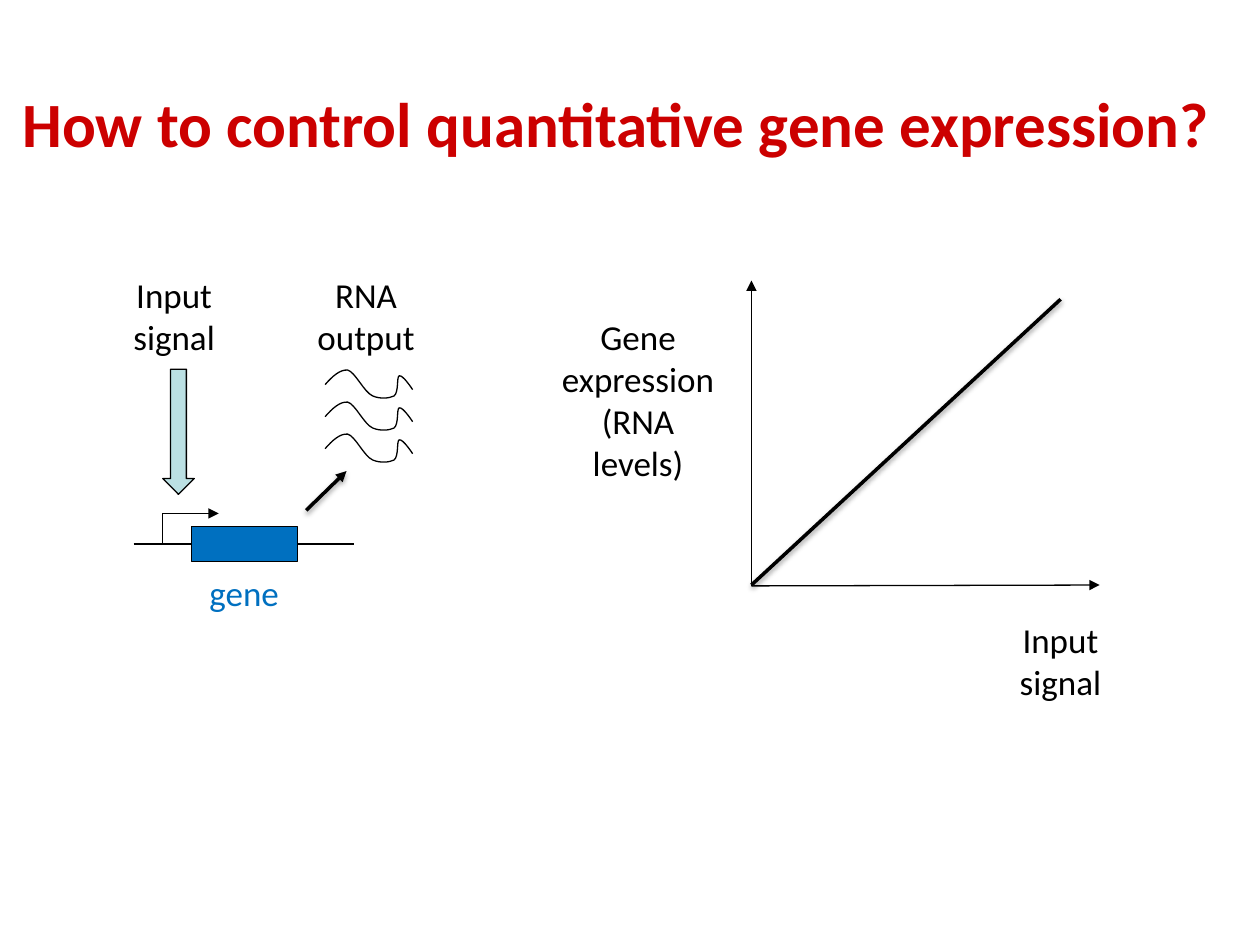
from pptx import Presentation
from pptx import util as u
from pptx.dml.color import RGBColor
from pptx.enum import shapes, text
from pptx.oxml import parse_xml
from pptx.oxml.ns import nsdecls, qn
from lxml import etree

Pt = u.Pt
BLACK = RGBColor(0, 0, 0)
RED = RGBColor(0xCC, 0, 0)
BLUE = RGBColor(0, 0x70, 0xC0)
PALE = RGBColor(0xBB, 0xE0, 0xE3)

SHADE = (
    '<a:effectLst %s><a:outerShdw blurRad="%d" dist="%d" dir="5400000" rotWithShape="0">'
    '<a:srgbClr val="000000"><a:alpha val="38000"/></a:srgbClr>'
    '</a:outerShdw></a:effectLst>' % (nsdecls("a"), Pt(3.1), Pt(1.6))
)
PLAIN = "<a:effectLst %s/>" % nsdecls("a")

# One RNA strand: a start point, then cubic curves (two handles and an end)
START = (0, 8.7)
CURVES = [
    (4.3, 3.8), (8.6, 0), (12.9, 0.4),
    (17.2, 1.5), (22.2, 13), (27.2, 15.2),
    (31.5, 17), (36.5, 16.6), (39.4, 15.2),
    (42.2, 13), (40.8, 4.4), (42.3, 3.7),
    (44.4, 2.9), (50, 11.6), (50, 11.6),
]


def label(parts, words, x, y, w, h, size=20, color=BLACK, bold=None, align=text.PP_ALIGN.CENTER):
    box = parts.add_textbox(Pt(x), Pt(y), Pt(w), Pt(h))
    frame = box.text_frame
    frame.word_wrap = True
    frame.auto_size = text.MSO_AUTO_SIZE.SHAPE_TO_FIT_TEXT
    para = frame.paragraphs[0]
    para.alignment = align
    run = para.add_run()
    run.text = words
    font = run.font
    font.name, font.size, font.bold = "Calibri", Pt(size), bold
    font.color.rgb = color


def line(parts, x1, y1, x2, y2, width=0.75, arrow=False, shade=False):
    item = parts.add_connector(shapes.MSO_CONNECTOR.STRAIGHT, Pt(x1), Pt(y1), Pt(x2), Pt(y2))
    item.line.width = Pt(width)
    item.line.color.rgb = BLACK
    props = item._element.spPr
    if arrow:
        etree.SubElement(props.find(qn("a:ln")), qn("a:tailEnd"), type="triangle")
    props.append(parse_xml(SHADE if shade else PLAIN))
    return item


def style(item, fill=None):
    item.shadow.inherit = False
    if fill is None:
        item.fill.background()
    else:
        item.fill.solid()
        item.fill.fore_color.rgb = fill
    item.line.color.rgb = BLACK
    item.line.width = Pt(0.75)


def block(parts, kind, x, y, w, h, fill):
    item = parts.add_shape(kind, Pt(x), Pt(y), Pt(w), Pt(h))
    style(item, fill)
    return item


def strand(parts, x, y):
    pen = parts.build_freeform(Pt(x + START[0]), Pt(y + START[1]))
    pen.add_line_segments([(Pt(x + a), Pt(y + b)) for a, b in CURVES], close=False)
    item = pen.convert_to_shape()
    style(item)
    # Join each three points into one cubic curve
    steps = list(item._element.iter(qn("a:lnTo")))
    for i in range(0, len(steps), 3):
        curve = etree.Element(qn("a:cubicBezTo"))
        steps[i].addprevious(curve)
        for step in steps[i:i + 3]:
            curve.append(step[0])
            step.getparent().remove(step)


def title(slide, x, y, w, h):
    label(slide.shapes, "How to control quantitative gene expression?", x, y, w, h,
          36, RED, True, text.PP_ALIGN.LEFT)


def graph(slide, x, y, w, h):
    parts = slide.shapes.add_group_shape().shapes
    left, base = x + 117, y + h
    # Axes and response
    line(parts, left, base, x + w, base - 0.5, arrow=True)
    line(parts, left, base, left, y, arrow=True)
    line(parts, left, base - 0.5, x + 293.7, y + 10.7, 2, shade=True)
    # Axis names
    label(parts, "Input signal", x + 261.2, base + 15, 64.8, 55.5)
    label(parts, "Gene expression (RNA levels)", x, y + 16.3, 104.4, 104.4)


def circuit(slide, x, y):
    parts = slide.shapes.add_group_shape().shapes
    # Gene on its strand of DNA
    mid = y + 158.3
    gene = block(parts, shapes.MSO_SHAPE.RECTANGLE, x + 54.7, mid - 10.1, 60.5, 20.2, BLUE)
    line(parts, x + 21.6, mid, x + 54.7, mid).end_connect(gene, 1)
    line(parts, x + 115.2, mid, x + 147.5, mid).begin_connect(gene, 3)
    # Promoter, then the way to RNA
    line(parts, x + 38.2, mid + 0.5, x + 38.2, y + 140.8)
    line(parts, x + 38.6, y + 140.8, x + 70.2, y + 140.8, arrow=True)
    line(parts, x + 120.2, y + 139, x + 143.2, y + 116.6, 2, arrow=True, shade=True)
    # RNA strands
    for i in range(3):
        strand(parts, x + 131, y + 95.1 - 18.3 * i)
    # Input arrow
    block(parts, shapes.MSO_SHAPE.DOWN_ARROW, x + 38.2, y + 58.4, 18, 71.5, PALE)
    # Names
    label(parts, "Input signal", x - 0.3, y, 90, 55.5)
    label(parts, "gene", x + 54.5, y + 170.5, 60.5, 31.5, color=BLUE)
    label(parts, "RNA output", x + 118.7, y, 71.3, 55.5)


def main():
    deck = Presentation()
    deck.slide_width, deck.slide_height = Pt(720), Pt(540)
    slide = deck.slides.add_slide(deck.slide_layouts[6])
    title(slide, 5.8, 44.6, 705, 51)
    graph(slide, 312.4, 160.3, 316, 174.5)
    circuit(slide, 54.8, 152.6)
    deck.save("out.pptx")


if __name__ == "__main__":
    main()
